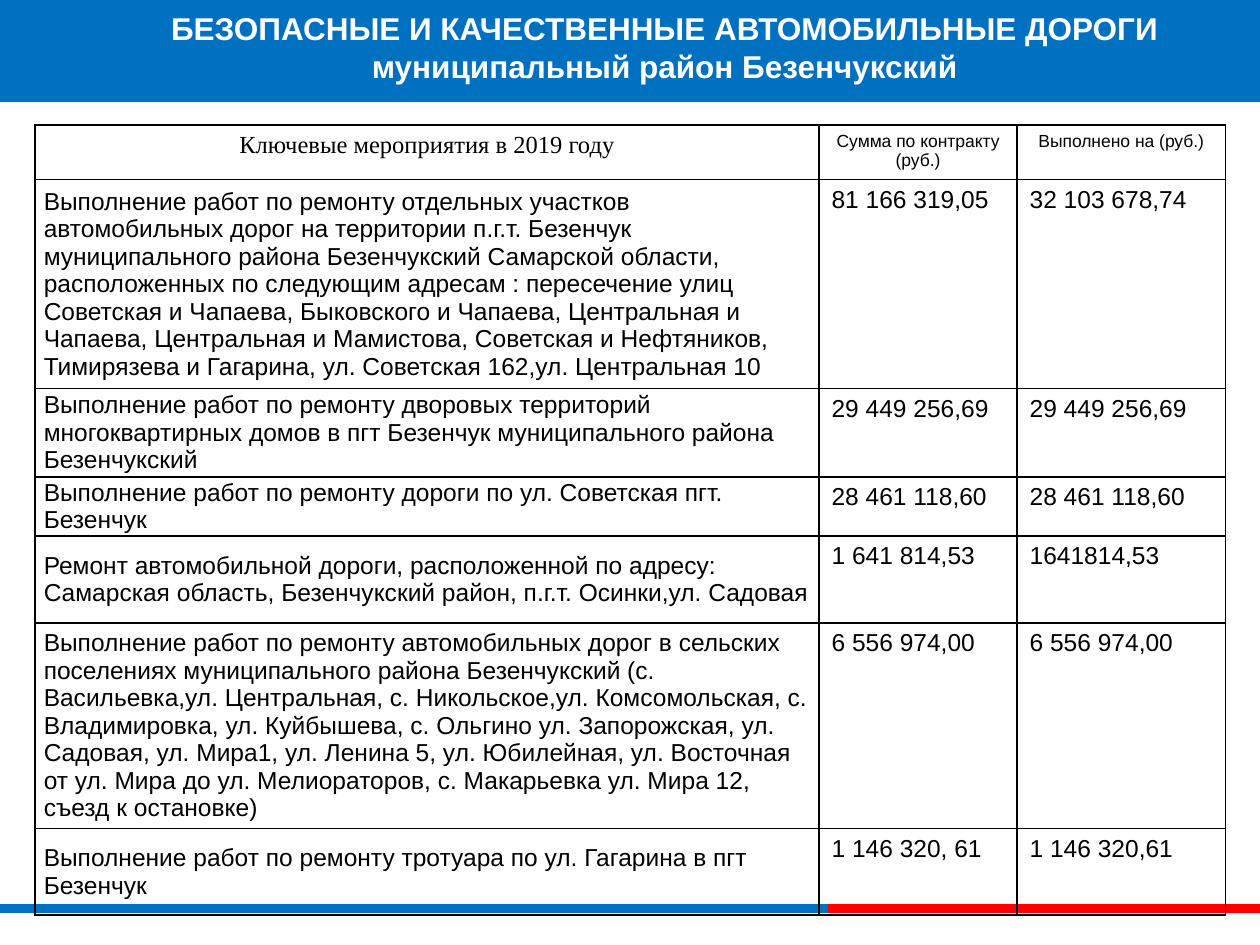
"""Build a slide with a table of road repair contracts and payments."""
from lxml.etree import SubElement
from pptx import Presentation
from pptx.dml.color import RGBColor as RGB
from pptx.enum.shapes import MSO_CONNECTOR as Connector, MSO_SHAPE as Shape
from pptx.enum.text import MSO_ANCHOR as Anchor, PP_ALIGN as Align
from pptx.oxml.ns import qn
from pptx.util import Pt

TITLE = ["БЕЗОПАСНЫЕ И КАЧЕСТВЕННЫЕ АВТОМОБИЛЬНЫЕ ДОРОГИ", "муниципальный район Безенчукский"]
HEADINGS = ["Ключевые мероприятия в 2019 году", "Сумма по контракту (руб.)", "Выполнено на (руб.)"]
WORKS = [
    (["Выполнение работ по ремонту отдельных участков автомобильных дорог на территории п.г.т. Безенчук",
      "муниципального района Безенчукский Самарской области, расположенных по следующим адресам : "
      "пересечение улиц",
      "Советская и Чапаева, Быковского и Чапаева, Центральная и Чапаева, Центральная и Мамистова, "
      "Советская и Нефтяников, Тимирязева и Гагарина, ул. Советская 162,ул. Центральная 10"],
     "81 166 319,05", "32 103 678,74"),
    (["Выполнение работ по ремонту дворовых территорий многоквартирных домов в пгт Безенчук "
      "муниципального района Безенчукский"], "29 449 256,69", "29 449 256,69"),
    (["Выполнение работ по ремонту дороги по ул. Советская пгт. Безенчук"],
     "28 461 118,60", "28 461 118,60"),
    (["Ремонт автомобильной дороги, расположенной по адресу: Самарская область, Безенчукский район, "
      "п.г.т. Осинки,ул. Садовая"], "1 641 814,53", "1641814,53"),
    (["Выполнение работ по ремонту автомобильных дорог в сельских поселениях муниципального района "
      "Безенчукский (с. Васильевка,ул. Центральная, с. Никольское,ул. Комсомольская, с. Владимировка, "
      "ул. Куйбышева, с. Ольгино ул. Запорожская, ул. Садовая, ул. Мира1, ул. Ленина 5, ул. Юбилейная, "
      "ул. Восточная от ул. Мира до ул. Мелиораторов, с. Макарьевка ул. Мира 12, съезд к остановке)"],
     "6 556 974,00", "6 556 974,00"),
    (["Выполнение работ по ремонту тротуара по ул. Гагарина в пгт Безенчук"],
     "1 146 320, 61", "1 146 320,61"),
]

THEME = {
    "blue": RGB(0x00, 0x70, 0xC1), "red": RGB(0xFF, 0, 0),
    "white": RGB(0xFF, 0xFF, 0xFF), "black": RGB(0, 0, 0),
    "sans": "Arial", "serif": "Times New Roman",
    "title": 18, "body": 14, "heading": 10,
}
SLIDE_W, SLIDE_H = 720, 540
COLUMNS = [448, 113.2, 119]
ROWS = [31, 119.4, 49.7, 33.1, 49.7, 115.8, 49.2]
TABLE_LEFT, TABLE_TOP = 20, 71.4
STRIPE_Y, STRIPE_SPLIT = 519.2, 473


def style(paragraph, size, color="black", face="sans", bold=False, align=Align.LEFT):
    paragraph.alignment = align
    font = paragraph.font
    font.size, font.name, font.bold = Pt(THEME[size]), THEME[face], bold
    font.color.rgb = THEME[color]


def add_stripe(slide, start, end, color):
    stripe = slide.shapes.add_connector(Connector.STRAIGHT, Pt(start), Pt(STRIPE_Y), Pt(end), Pt(STRIPE_Y))
    stripe.line.color.rgb = THEME[color]
    stripe.line.width = Pt(5)
    SubElement(stripe._element.spPr, qn("a:effectLst"))


def add_banner(slide):
    banner = slide.shapes.add_shape(Shape.RECTANGLE, 0, Pt(-2.2), Pt(SLIDE_W), Pt(60.5))
    banner.shadow.inherit = False
    banner.fill.solid()
    banner.fill.fore_color.rgb = THEME["blue"]
    banner.line.fill.background()
    title = slide.shapes.add_textbox(Pt(93.6), Pt(-2.2), Pt(572.4), Pt(58.3)).text_frame
    title.word_wrap = True
    title.vertical_anchor = Anchor.MIDDLE
    title.margin_left = title.margin_right = title.margin_top = title.margin_bottom = Pt(3.6)
    paragraph = title.paragraphs[0]
    program, district = TITLE
    paragraph.add_run().text = program
    paragraph.add_line_break()
    paragraph.add_run().text = district
    style(paragraph, "title", "white", bold=True, align=Align.CENTER)


def frame_cell(cell):
    properties = cell._tc.get_or_add_tcPr()
    for side in ("lnL", "lnR", "lnT", "lnB"):
        border = SubElement(properties, qn(f"a:{side}"), w=str(Pt(1)))
        ink = SubElement(border, qn("a:solidFill"))
        SubElement(ink, qn("a:srgbClr"), val=str(THEME["black"]))
    cell.fill.background()


def fill_cell(cell, lines, **look):
    cell.text = "\n".join(lines)
    for paragraph in cell.text_frame.paragraphs:
        style(paragraph, **look)
    frame_cell(cell)


def add_works(slide):
    table = slide.shapes.add_table(len(ROWS), len(COLUMNS), Pt(TABLE_LEFT), Pt(TABLE_TOP),
                                   Pt(sum(COLUMNS)), Pt(sum(ROWS))).table
    table.first_row = table.horz_banding = False
    for column, width in zip(table.columns, COLUMNS):
        column.width = Pt(width)
    for row, height in zip(table.rows, ROWS):
        row.height = Pt(height)
    for index, heading in enumerate(HEADINGS):
        look = {"size": "heading"} if index else {"size": "body", "face": "serif"}
        fill_cell(table.cell(0, index), [heading], align=Align.CENTER, **look)
    for index, (work, contract, done) in enumerate(WORKS, 1):
        description = table.cell(index, 0)
        description.vertical_anchor = Anchor.MIDDLE
        description.margin_left = description.margin_right = Pt(5)
        description.margin_top = description.margin_bottom = 0
        for column, lines in enumerate((work, [contract], [done])):
            fill_cell(table.cell(index, column), lines, size="body")


def main():
    deck = Presentation()
    deck.slide_width, deck.slide_height = Pt(SLIDE_W), Pt(SLIDE_H)
    slide = deck.slides.add_slide(deck.slide_layouts[6])
    add_stripe(slide, 0, STRIPE_SPLIT, "blue")
    add_stripe(slide, STRIPE_SPLIT, SLIDE_W, "red")
    add_banner(slide)
    add_works(slide)
    deck.save("out.pptx")


if __name__ == "__main__":
    main()
